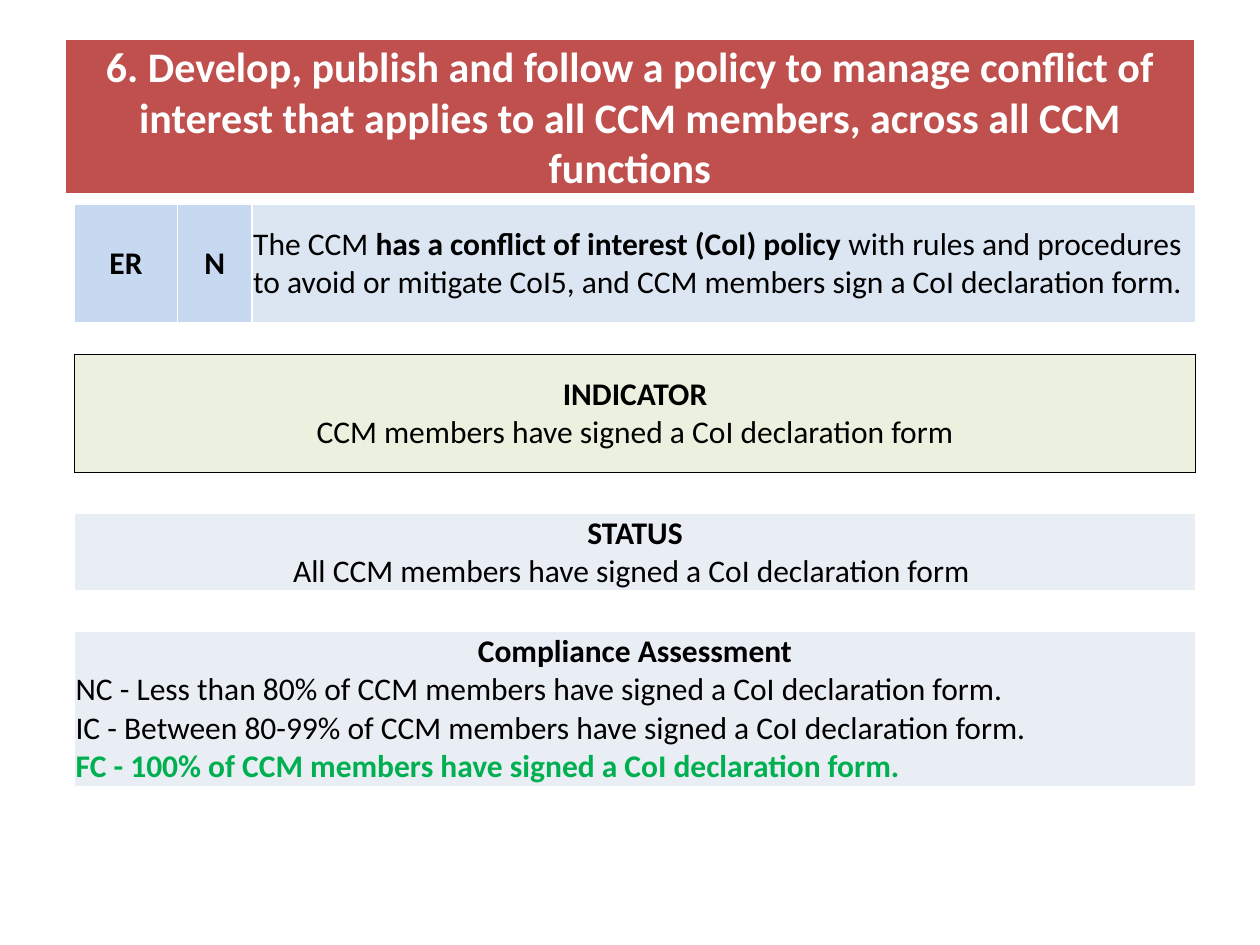
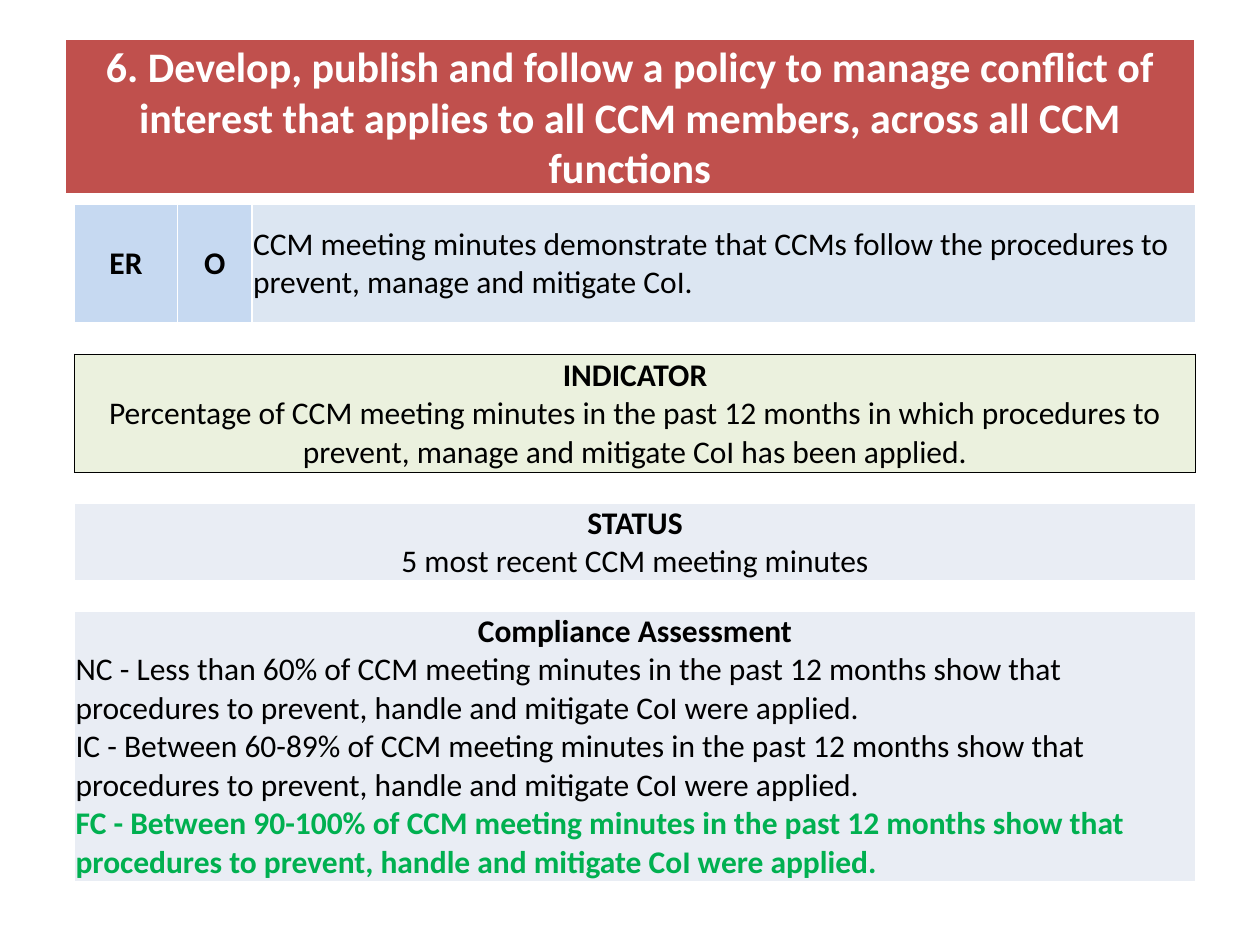
import pptx
import pptx.dml.color
import pptx.enum.text
import pptx.oxml
import pptx.oxml.ns
import pptx.util
from pptx.util import Inches

RED, WHITE, BLACK, GREEN = "C0504D", "FFFFFF", "000000", "00B050"
BLUE, PALE, LIME, GREY = "C6D9F1", "DCE6F2", "EBF1DE", "E9EDF4"
FONT = "Calibri"
LEFT, TOP, WIDTH = 0.59, 1.62, 8.9
TAGS = (0.82, 0.59)
TALL, SHORT, GAP = 0.94, 0.62, 0.25
MID = pptx.enum.text.MSO_ANCHOR.MIDDLE
ALIGN = {"c": pptx.enum.text.PP_ALIGN.CENTER,
         "l": pptx.enum.text.PP_ALIGN.LEFT}

TITLE = ("6. Develop, publish and follow a policy to manage conflict of "
         "interest that applies to all CCM members, across all CCM functions")

# A rule is a list of (text, bold) runs; levels run from worst to best.
SLIDES = [
    {
        "code": "N",
        "rule": [
            ("The CCM ", False),
            ("has a conflict of interest (CoI) policy ", True),
            ("with rules and procedures to avoid or mitigate CoI5, and CCM "
             "members sign a CoI declaration form.", False),
        ],
        "sign": "CCM members have signed a CoI declaration form",
        "status": "All CCM members have signed a CoI declaration form ",
        "levels": [
            "NC - Less than 80% of CCM members have signed a CoI declaration form.",
            "IC - Between 80-99% of CCM members have signed a CoI declaration form.",
            "FC - 100% of CCM members have signed a CoI declaration form.",
        ],
        "gap": 0.32, "height": 1.21,
    },
    {
        "code": "O",
        "rule": [("CCM meeting minutes demonstrate that CCMs follow the "
                  "procedures to prevent, manage and mitigate CoI.", False)],
        "sign": "Percentage of CCM meeting minutes in the past 12 months in which "
                "procedures to prevent, manage and mitigate CoI has been applied.",
        "status": "5 most recent CCM meeting minutes",
        "levels": [
            f"{span} of CCM meeting minutes in the past 12 months show that "
            "procedures to prevent, handle and mitigate CoI were applied."
            for span in ("NC - Less than 60%", "IC - Between 60-89%",
                         "FC - Between 90-100%")
        ],
        "gap": 0.24, "height": 2.11,
    },
]


def paint(fill, code):
    fill.solid()
    fill.fore_color.rgb = pptx.dml.color.RGBColor.from_string(code)


def write(frame, paras, size=18):
    """Fill a frame from (align, runs), each run being (text, bold, colour)."""
    for i, (align, runs) in enumerate(paras):
        para = frame.paragraphs[0] if i == 0 else frame.add_paragraph()
        para.alignment = ALIGN[align]
        for text, bold, code in runs:
            run = para.add_run()
            run.text = text
            run.font.name = FONT
            run.font.size = pptx.util.Pt(size)
            run.font.bold = bold
            paint(run.font.fill, code)


def border(cell, code, points):
    props = cell._tc.get_or_add_tcPr()
    for i, side in enumerate("LRTB"):
        props.insert(i, pptx.oxml.parse_xml(
            f'<a:ln{side} {pptx.oxml.ns.nsdecls("a")} w="{pptx.util.Pt(points)}">'
            f'<a:solidFill><a:srgbClr val="{code}"/></a:solidFill></a:ln{side}>'))


def band(slide, top, height, cells, line=(WHITE, 1)):
    """Add a one-row table of (width, fill, paragraphs) cells."""
    table = slide.shapes.add_table(
        1, len(cells), Inches(LEFT), Inches(top), Inches(WIDTH),
        Inches(height)).table
    table.first_row = table.horz_banding = False
    table.rows[0].height = Inches(height)
    for i, (width, fill, paras) in enumerate(cells):
        table.columns[i].width = Inches(width)
        cell = table.cell(0, i)
        cell.margin_left = cell.margin_right = cell.margin_top = Inches(0.01)
        cell.margin_bottom = 0
        cell.vertical_anchor = MID
        paint(cell.fill, fill)
        border(cell, *line)
        write(cell.text_frame, paras)


def head(slide):
    title = slide.shapes.title
    title.left, title.top = Inches(0.51), Inches(0.3)
    title.width, title.height = Inches(8.98), Inches(1.25)
    paint(title.fill, RED)
    paint(title.line.fill, WHITE)
    title.line.width = pptx.util.Pt(2)
    frame = title.text_frame
    frame.word_wrap = True
    frame.auto_size = pptx.enum.text.MSO_AUTO_SIZE.NONE
    frame.vertical_anchor = MID
    write(frame, [("c", [(TITLE, True, WHITE)])], 24)


def label(text, bold=True):
    return ("c", [(text, bold, BLACK)])


def build(deck, item):
    slide = deck.slides.add_slide(deck.slide_layouts[5])
    head(slide)
    rule = [(text, bold, BLACK) for text, bold in item["rule"]]
    tags = [(width, BLUE, [label(text)])
            for width, text in zip(TAGS, ("ER", item["code"]))]
    sign = [label("INDICATOR"), label(item["sign"], False)]
    status = [label("STATUS"), label(item["status"], False)]
    *lower, best = item["levels"]
    grades = [label("Compliance Assessment")]
    grades += [("l", [(text, False, BLACK)]) for text in lower]
    grades.append(("l", [(best, True, GREEN)]))

    top = TOP
    band(slide, top, TALL, tags + [(WIDTH - sum(TAGS), PALE, [("l", rule)])])
    top += TALL + GAP
    band(slide, top, TALL, [(WIDTH, LIME, sign)], (BLACK, 0.5))
    top += TALL + item["gap"]
    band(slide, top, SHORT, [(WIDTH, GREY, status)])
    top += SHORT + item["gap"]
    band(slide, top, item["height"], [(WIDTH, GREY, grades)])


def main():
    deck = pptx.Presentation()
    deck.slide_width, deck.slide_height = Inches(10), Inches(7.5)
    for item in SLIDES:
        build(deck, item)
    deck.save("out.pptx")


if __name__ == "__main__":
    main()
